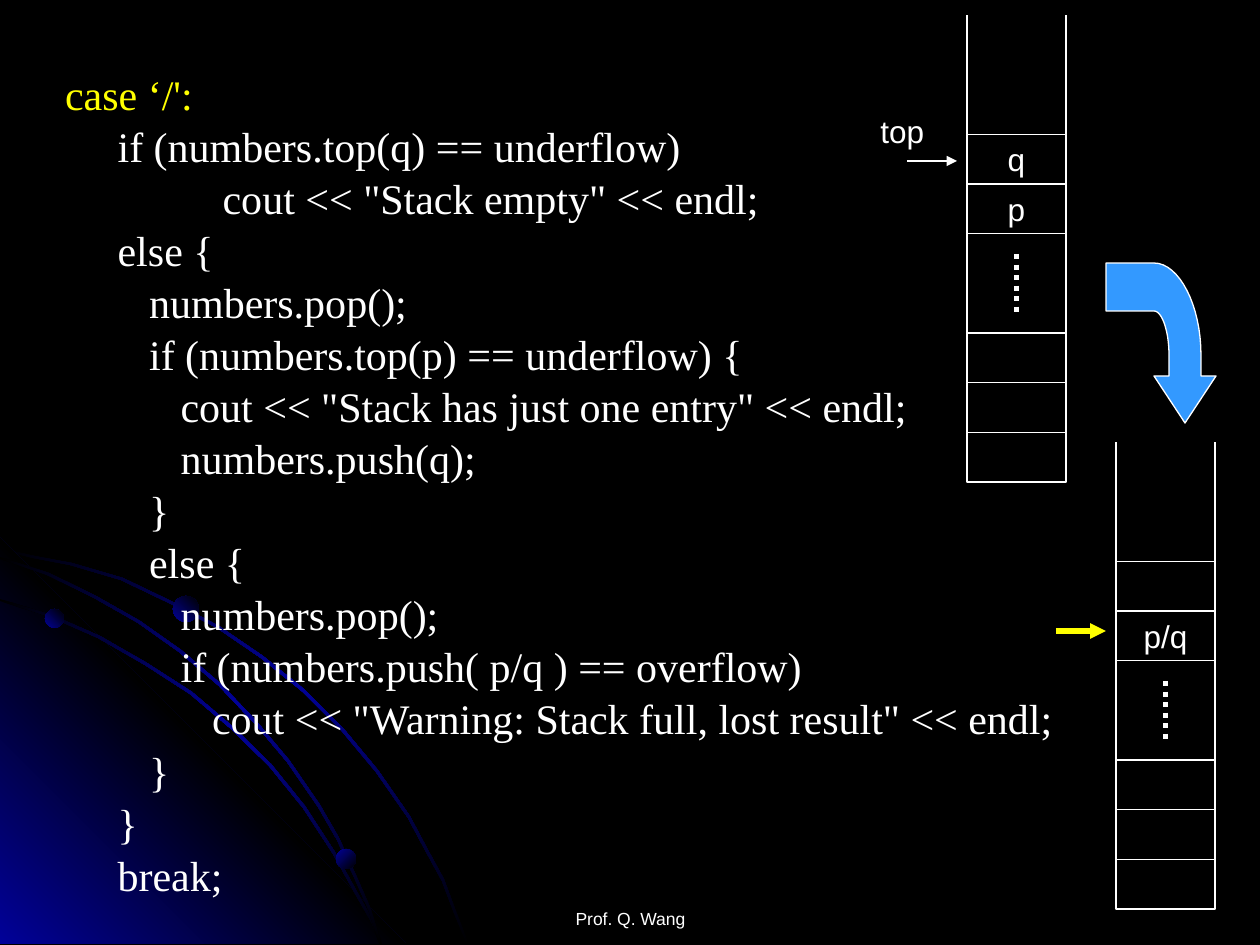
from dataclasses import dataclass

from lxml import etree
from pptx import Presentation, util as u
from pptx.dml.color import RGBColor
from pptx.enum import dml, shapes, text
from pptx.oxml import ns

PX = 914400 / 126
WIDTH, HEIGHT = 1260, 945


@dataclass(frozen=True)
class Theme:
    black: str = "000000"
    white: str = "FFFFFF"
    yellow: str = "FFFF00"
    navy: str = "010199"
    sky: str = "3399FF"
    code_font: str = "Times New Roman"
    label_font: str = "Arial"
    code_size: int = 24
    label_size: int = 18
    footer_size: int = 10
    thin: float = 0.75
    thick: float = 3


THEME = Theme()

# Indent, counted in character spaces, and code
CODE = [
    (1, "case ‘/':"),
    (6, "if (numbers.top(q) == underflow)"),
    (16, 'cout << "Stack empty" << endl;'),
    (6, "else {"),
    (9, "numbers.pop();"),
    (9, "if (numbers.top(p) == underflow) {"),
    (12, 'cout << "Stack has just one entry" << endl;'),
    (12, "numbers.push(q);"),
    (9, "}"),
    (9, "else {"),
    (12, "numbers.pop();"),
    (12, "if (numbers.push( p/q ) == overflow)"),
    (15, 'cout << "Warning: Stack full, lost result" << endl;'),
    (9, "}"),
    (6, "}"),
    (6, "break;"),
]

# Cells are keyed by row, counted from the bottom; rows 3 and 4 hold the dots
STACKS = [
    {"left": 967, "bottom": 482, "cells": {0: "", 1: "", 2: "", 5: "p", 6: "q"},
     "pointer_y": 161, "pointer_color": THEME.white, "pointer_width": THEME.thin},
    {"left": 1116, "bottom": 909, "cells": {0: "", 1: "", 2: "", 5: "p/q", 6: ""},
     "pointer_y": 631, "pointer_color": THEME.yellow, "pointer_width": THEME.thick},
]
CELL_WIDTH, CELL_HEIGHT, WALL_HEIGHT = 99, 149 / 3, 467

LARGE_ARC = [(0, 548), (35, 556), (72, 563), (123, 578), (171, 601), (219, 626),
             (263, 656), (305, 690), (343, 728), (378, 770), (410, 816), (427, 848),
             (444, 879), (456, 911), (469, 944)]
LOW_ARC = [(0, 599), (52, 615), (100, 636), (147, 663), (192, 692), (232, 726),
           (271, 764), (305, 806), (335, 852), (360, 897), (373, 920), (382, 944)]
MIDDLE_ARC = [(0, 557), (49, 573), (96, 596), (140, 621), (181, 650), (221, 684),
              (257, 722), (289, 760), (320, 805), (339, 838), (355, 873), (370, 907),
              (382, 944)]
CORNER = [(0, 538), (406, 944), (0, 944)]
# Left, top, diameter, gradient angle
PLANETS = [(45, 609, 19, 315), (336, 849, 20, 45), (173, 596, 26, 315)]


def px(*lengths):
    return [u.Emu(round(length * PX)) for length in lengths]


def rgb(color):
    return RGBColor.from_string(color)


def add_xml(parent, tag, **attributes):
    return etree.SubElement(parent, ns.qn(tag), attributes)


def fill_gradient(shape, colors, angle):
    """Spread the colours evenly, with the angle measured clockwise."""
    shape.fill.gradient()
    gradient = shape.fill._fill._gradFill
    for child in list(gradient):
        gradient.remove(child)
    stops = add_xml(gradient, "a:gsLst")
    for index, color in enumerate(colors):
        position = index * 100000 // (len(colors) - 1)
        add_xml(add_xml(stops, "a:gs", pos=str(position)), "a:srgbClr", val=color)
    add_xml(gradient, "a:lin", ang=str(angle * 60000), scaled="0")
    shape.line.fill.background()


def add_outline(slide, points):
    start, *rest = [px(*point) for point in points]
    builder = slide.shapes.build_freeform(*start, scale=1.0)
    builder.add_line_segments(rest, close=True)
    shape = builder.convert_to_shape()
    shape.shadow.inherit = False
    return shape


def curve(start, first, second, end, steps=16):
    """Points along a cubic curve."""
    return [tuple((1 - t) ** 3 * a + 3 * (1 - t) ** 2 * t * b
                  + 3 * (1 - t) * t ** 2 * c + t ** 3 * d
                  for a, b, c, d in zip(start, first, second, end))
            for t in (step / steps for step in range(steps + 1))]


def add_line(slide, start, end, color=THEME.white, width=THEME.thin, dotted=False, arrow=False):
    line = slide.shapes.add_connector(shapes.MSO_CONNECTOR.STRAIGHT, *px(*start, *end))
    line.line.color.rgb = rgb(color)
    line.line.width = u.Pt(width)
    if dotted:
        line.line.dash_style = dml.MSO_LINE.ROUND_DOT
    if arrow:
        add_xml(line.line._get_or_add_ln(), "a:tailEnd", type="triangle")
    add_xml(line._element.spPr, "a:effectLst")


def add_run(paragraph, words, size, color=THEME.white, font=THEME.label_font):
    run = paragraph.add_run()
    run.text = words
    run.font.name, run.font.size = font, u.Pt(size)
    run.font.color.rgb = rgb(color)


def add_backdrop(slide):
    slide.background.fill.solid()
    slide.background.fill.fore_color.rgb = rgb(THEME.black)

    def add_band(arc):
        inner = [(max(0, x - 2), min(HEIGHT, y + 2)) for x, y in reversed(arc)]
        fill_gradient(add_outline(slide, arc + inner),
                      [THEME.black, THEME.navy, THEME.black], 45)

    add_band(LARGE_ARC)
    fill_gradient(add_outline(slide, CORNER), [THEME.navy, THEME.black, THEME.navy], 315)
    add_band(LOW_ARC)
    add_band(MIDDLE_ARC)
    for left, top, size, angle in PLANETS:
        planet = slide.shapes.add_shape(shapes.MSO_SHAPE.OVAL, *px(left, top, size, size))
        planet.shadow.inherit = False
        fill_gradient(planet, [THEME.navy, THEME.black], angle)


def fill_code(body):
    body.left, body.top, body.width, body.height = px(42, 72, 1176, 808)
    frame = body.text_frame
    frame.auto_size = text.MSO_AUTO_SIZE.NONE
    frame.vertical_anchor = text.MSO_ANCHOR.TOP
    for index, (spaces, words) in enumerate(CODE):
        paragraph = frame.add_paragraph() if index else frame.paragraphs[0]
        properties = paragraph._p.get_or_add_pPr()
        properties.set("marL", str(u.Pt(spaces * THEME.code_size / 4)))
        properties.set("indent", "0")
        add_xml(properties, "a:buNone")
        paragraph.line_spacing = 0.8
        paragraph.space_before = u.Pt(6.7 if index else 0)
        add_run(paragraph, words, THEME.code_size, font=THEME.code_font,
                color=THEME.white if index else THEME.yellow)


def add_label(slide, box, words, size, margin_top, alignment, wrap):
    frame = slide.shapes.add_textbox(*px(*box)).text_frame
    frame.word_wrap = wrap
    frame.margin_top = px(margin_top)[0]
    frame.paragraphs[0].alignment = alignment
    add_run(frame.paragraphs[0], words, size)


def add_stack(slide, left, bottom, cells, pointer_y, pointer_color, pointer_width):
    for row, words in cells.items():
        cell = slide.shapes.add_shape(
            shapes.MSO_SHAPE.RECTANGLE,
            *px(left, bottom - (row + 1) * CELL_HEIGHT, CELL_WIDTH, CELL_HEIGHT))
        cell.shadow.inherit = False
        cell.fill.background()
        cell.line.color.rgb = rgb(THEME.white)
        cell.line.width = u.Pt(THEME.thin)
        if words:
            frame = cell.text_frame
            frame.word_wrap = False
            frame.vertical_anchor = text.MSO_ANCHOR.MIDDLE
            frame.paragraphs[0].alignment = text.PP_ALIGN.CENTER
            add_run(frame.paragraphs[0], words, THEME.label_size)
    for x in (left, left + CELL_WIDTH):
        add_line(slide, (x, bottom), (x, bottom - WALL_HEIGHT))
    middle = left + CELL_WIDTH / 2
    add_line(slide, (middle, bottom - 228), (middle, bottom - 168), width=THEME.thick, dotted=True)
    add_line(slide, (left - 60, pointer_y), (left - 10, pointer_y),
             pointer_color, pointer_width, arrow=True)


def add_bent_arrow(slide):
    outer = curve((1201, 355), (1201, 305), (1179, 263), (1154, 263))
    inner = curve((1154, 311), (1162, 311), (1169, 331), (1169, 355))
    arrow = add_outline(slide, [(1185, 423), (1216, 376), (1201, 376), *outer, (1106, 263),
                                (1106, 311), *inner, (1169, 376), (1154, 376)])
    arrow.fill.solid()
    arrow.fill.fore_color.rgb = rgb(THEME.sky)
    arrow.line.color.rgb = rgb(THEME.white)
    arrow.line.width = u.Pt(THEME.thin)


def main():
    presentation = Presentation()
    presentation.slide_width, presentation.slide_height = px(WIDTH, HEIGHT)
    slide = presentation.slides.add_slide(presentation.slide_layouts[1])
    title, body = slide.placeholders
    title._element.getparent().remove(title._element)
    add_backdrop(slide)
    slide.shapes._spTree.append(body._element)
    add_label(slide, (431, 882, 399, 63), "Prof. Q. Wang", THEME.footer_size, 26,
              text.PP_ALIGN.CENTER, True)
    fill_code(body)
    for stack in STACKS:
        add_stack(slide, **stack)
    add_label(slide, (868, 106, 69, 50), "top", THEME.label_size, 6, text.PP_ALIGN.LEFT, False)
    add_bent_arrow(slide)
    presentation.save("out.pptx")


if __name__ == "__main__":
    main()
